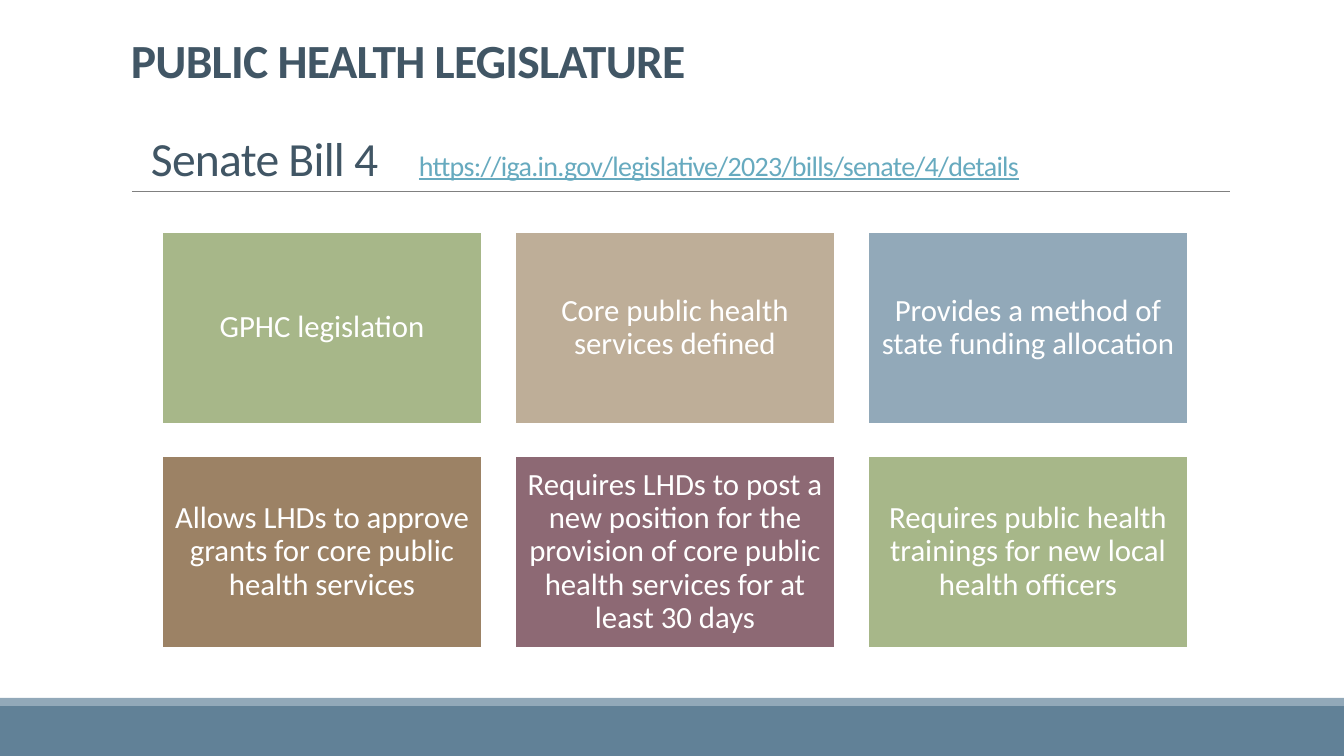
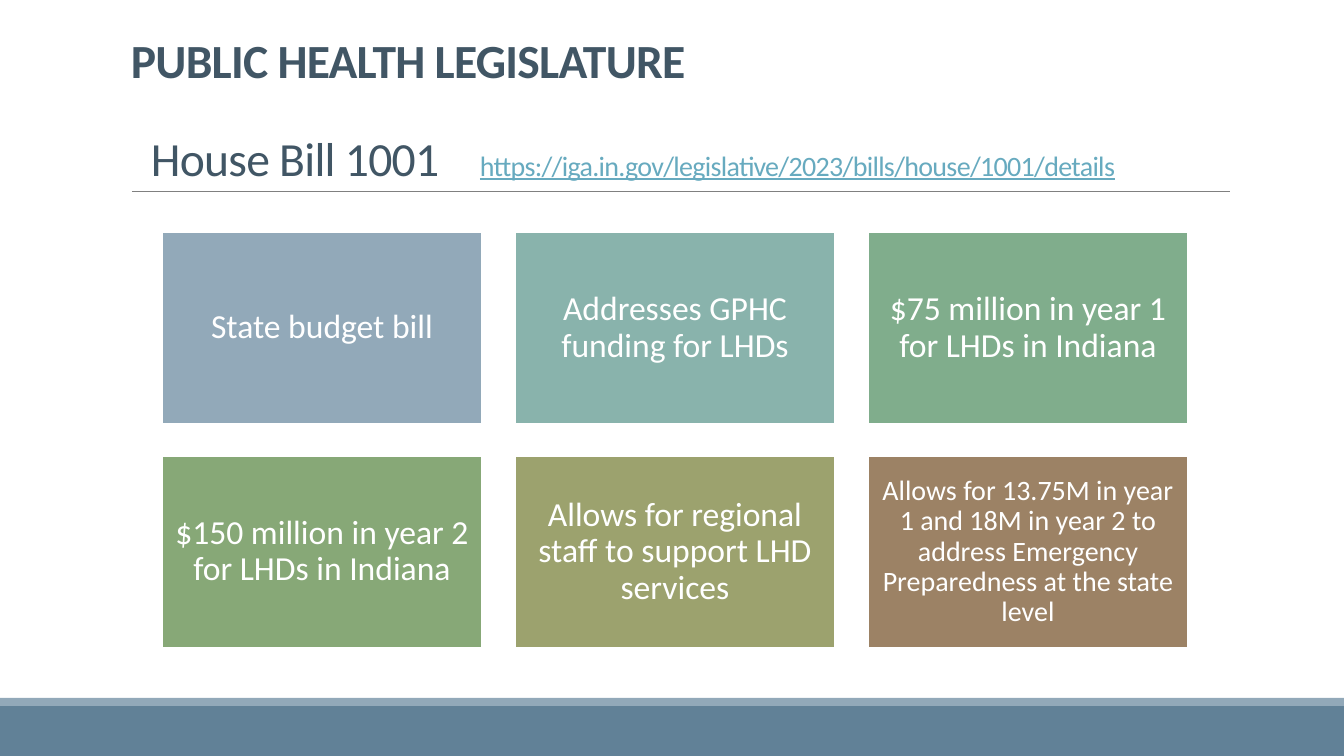
from dataclasses import dataclass
from typing import Any, NamedTuple

from lxml.etree import SubElement
from pptx import Presentation
from pptx.dml.color import RGBColor as Rgb
from pptx.enum.shapes import MSO_CONNECTOR as Connector, MSO_SHAPE as Preset
from pptx.enum.text import MSO_ANCHOR as Anchor, PP_ALIGN as Align
from pptx.oxml.ns import qn
from pptx.util import Emu, Pt

SLIDE_WIDTH, SLIDE_HEIGHT = 1344, 756
EMU_PER_PX = 12192000 / SLIDE_WIDTH


def px(length: int) -> Emu:
    return Emu(round(length * EMU_PER_PX))


class Box(NamedTuple):
    left: int
    top: int
    width: int
    height: int

    def emu(self) -> tuple[Emu, ...]:
        return tuple(px(length) for length in self)


@dataclass(frozen=True)
class Theme:
    font: str = "Calibri"
    white: str = "FFFFFF"
    title: str = "415665"
    link: str = "67AABF"
    rule: str = "808080"
    footer: str = "618197"
    steel: str = "92A9B9"
    sage: str = "A7B789"
    sand: str = "BEAE98"
    brown: str = "9C8265"
    plum: str = "8D6974"
    teal: str = "89B3AC"
    mint: str = "80AD8C"
    leaf: str = "87A877"
    olive: str = "9CA26E"
    title_size: int = 34
    link_size: int = 20
    tile_size: int = 22
    large_tile_size: int = 24
    small_tile_size: int = 20
    title_tracking: int = -50  # hundredths of a point


THEME = Theme()

TITLE = "PUBLIC HEALTH LEGISLATURE"
TITLE_BOX = Box(121, 31, 1109, 160)
BILL_INDENT = 20
RULE_LEFT, RULE_RIGHT, RULE_TOP = 132, 1230, 191
FOOTER_BOX = Box(0, 706, SLIDE_WIDTH, 50)
STRIP_BOX = Box(0, 698, SLIDE_WIDTH, 8)

FIRST_TILE = Box(162, 232, 320, 192)
TILE_COLUMNS = 3
TILE_GAP_X, TILE_GAP_Y = 33, 32
TILE_INSET = 9


@dataclass(frozen=True)
class Tile:
    text: str
    fill: str
    size: int = THEME.tile_size


@dataclass(frozen=True)
class Bill:
    name: str
    link: str
    link_tab: int
    tiles: tuple[Tile, ...]


BILLS = (
    Bill(
        "Senate Bill 4",
        "https://iga.in.gov/legislative/2023/bills/senate/4/details",
        288,
        (
            Tile("GPHC legislation", THEME.sage),
            Tile("Core public health services defined", THEME.sand),
            Tile("Provides a method of state funding allocation", THEME.steel),
            Tile("Allows LHDs to approve grants for core public health services", THEME.brown),
            Tile(
                "Requires LHDs to post a new position for the provision of core "
                "public health services for at least 30 days",
                THEME.plum,
            ),
            Tile("Requires public health trainings for new local health officers", THEME.sage),
        ),
    ),
    Bill(
        "House Bill 1001",
        "https://iga.in.gov/legislative/2023/bills/house/1001/details",
        349,
        (
            Tile("State budget bill", THEME.steel, THEME.large_tile_size),
            Tile("Addresses GPHC funding for LHDs", THEME.teal, THEME.large_tile_size),
            Tile("$75 million in year 1 for LHDs in Indiana", THEME.mint, THEME.large_tile_size),
            Tile("$150 million in year 2 for LHDs in Indiana", THEME.leaf, THEME.large_tile_size),
            Tile(
                "Allows for regional staff to support LHD services",
                THEME.olive,
                THEME.large_tile_size,
            ),
            Tile(
                "Allows for 13.75M in year 1 and 18M in year 2 to address "
                "Emergency Preparedness at the state level",
                THEME.brown,
                THEME.small_tile_size,
            ),
        ),
    ),
)


def set_attributes(target: Any, values: dict[str, Any]) -> None:
    for name, value in values.items():
        setattr(target, name, value)


def add_run(paragraph: Any, text: str, color: str, size: int, **font_values: Any) -> Any:
    run = paragraph.add_run()
    run.text = text
    set_attributes(run.font, {"name": THEME.font, "size": Pt(size), **font_values})
    run.font.color.rgb = Rgb.from_string(color)
    return run


def add_title_run(paragraph: Any, text: str, color: str, size: int, **font_values: Any) -> None:
    run = add_run(paragraph, text, color, size, **font_values)
    run._r.get_or_add_rPr().set("spc", str(THEME.title_tracking))


def add_tab_stops(paragraph: Any, *positions: int) -> None:
    tab_list = SubElement(paragraph._p.get_or_add_pPr(), qn("a:tabLst"))
    for position in positions:
        SubElement(tab_list, qn("a:tab"), pos=str(px(position)), algn="l")


def add_rectangle(slide: Any, box: Box, fill: str) -> Any:
    shape = slide.shapes.add_shape(Preset.RECTANGLE, *box.emu())
    shape.shadow.inherit = False
    shape.fill.solid()
    shape.fill.fore_color.rgb = Rgb.from_string(fill)
    shape.line.fill.background()
    return shape


def add_rule(slide: Any) -> None:
    rule = slide.shapes.add_connector(
        Connector.STRAIGHT, px(RULE_LEFT), px(RULE_TOP), px(RULE_RIGHT), px(RULE_TOP)
    )
    rule.line.color.rgb = Rgb.from_string(THEME.rule)
    rule.line.width = Pt(0.5)
    SubElement(rule._element.spPr, qn("a:effectLst"))


def add_title(slide: Any, bill: Bill) -> None:
    """Add the shared heading above the bill's name and web address."""
    frame = slide.shapes.add_textbox(*TITLE_BOX.emu()).text_frame
    set_attributes(frame, {"word_wrap": True, "vertical_anchor": Anchor.BOTTOM})
    heading = frame.paragraphs[0]
    heading.line_spacing = 0.85
    add_title_run(heading, TITLE, THEME.title, THEME.title_size, bold=True)

    bill_line = frame.add_paragraph()
    add_tab_stops(bill_line, BILL_INDENT, bill.link_tab)
    set_attributes(bill_line, {"line_spacing": 0.85, "space_before": Pt(35)})
    add_title_run(bill_line, f"\t{bill.name}\t", THEME.title, THEME.title_size)
    add_title_run(bill_line, bill.link, THEME.link, THEME.link_size, underline=True)


def add_tile(slide: Any, tile: Tile, box: Box) -> None:
    shape = add_rectangle(slide, box, tile.fill)
    shape.line.color.rgb = Rgb.from_string(THEME.white)
    shape.line.width = Pt(1.25)
    frame = shape.text_frame
    margins = {f"margin_{side}": px(TILE_INSET) for side in ("left", "top", "right", "bottom")}
    set_attributes(frame, {"word_wrap": True, "vertical_anchor": Anchor.MIDDLE, **margins})
    paragraph = frame.paragraphs[0]
    set_attributes(paragraph, {"alignment": Align.CENTER, "line_spacing": 0.9})
    add_run(paragraph, tile.text, THEME.white, tile.size)


def add_tile_grid(slide: Any, tiles: tuple[Tile, ...]) -> None:
    left, top, width, height = FIRST_TILE
    for index, tile in enumerate(tiles):
        row, column = divmod(index, TILE_COLUMNS)
        box = Box(
            left + column * (width + TILE_GAP_X),
            top + row * (height + TILE_GAP_Y),
            width,
            height,
        )
        add_tile(slide, tile, box)


def add_bill_slide(presentation: Any, bill: Bill) -> None:
    slide = presentation.slides.add_slide(presentation.slide_layouts[6])
    add_rectangle(slide, FOOTER_BOX, THEME.footer)
    add_rectangle(slide, STRIP_BOX, THEME.steel)
    add_rule(slide)
    add_title(slide, bill)
    add_tile_grid(slide, bill.tiles)


def main() -> None:
    presentation = Presentation()
    set_attributes(
        presentation, {"slide_width": px(SLIDE_WIDTH), "slide_height": px(SLIDE_HEIGHT)}
    )
    for bill in BILLS:
        add_bill_slide(presentation, bill)
    presentation.save("out.pptx")


if __name__ == "__main__":
    main()
